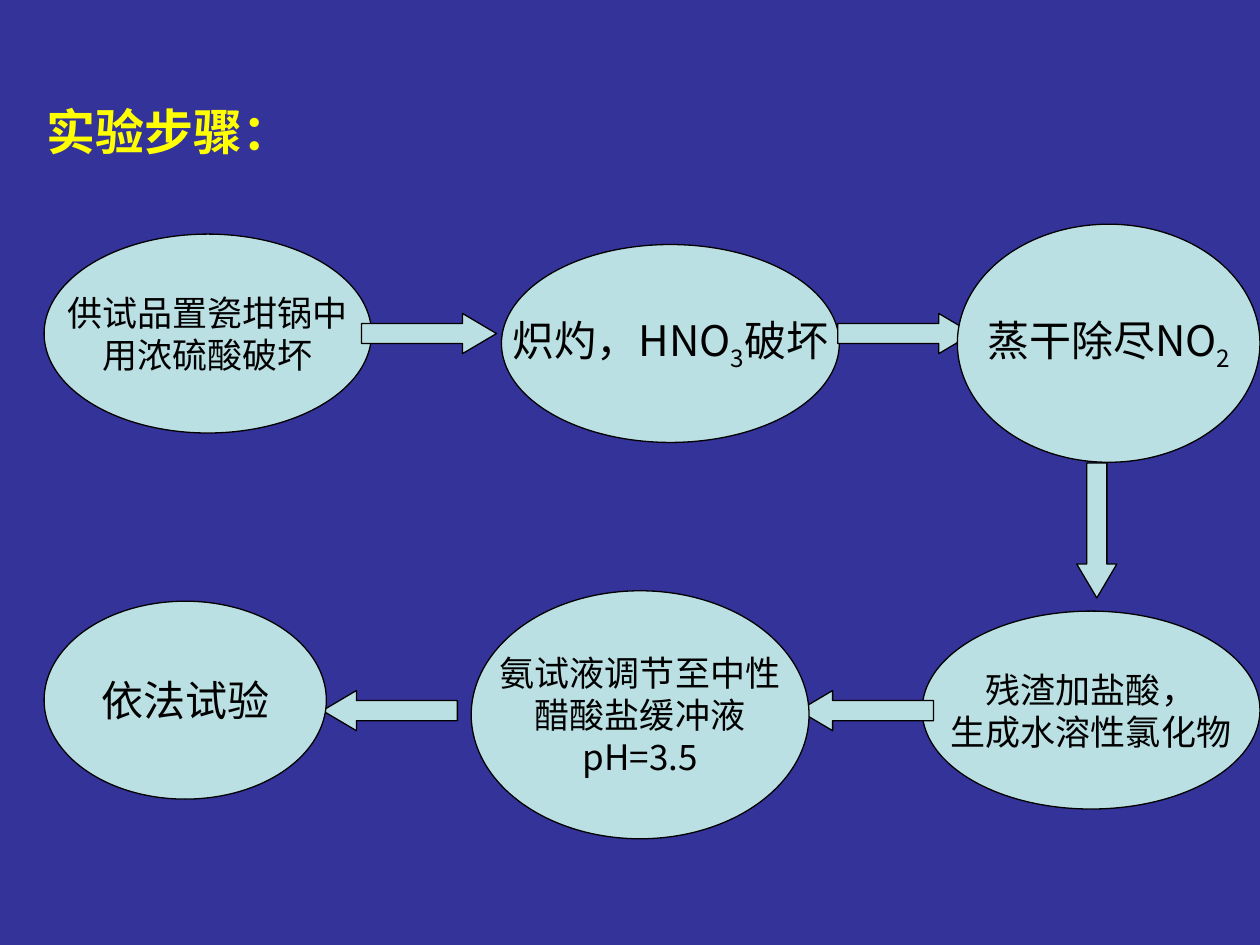
from pptx import Presentation
from pptx.dml.color import RGBColor
from pptx.enum.shapes import MSO_SHAPE
from pptx.enum.text import MSO_ANCHOR, MSO_AUTO_SIZE, PP_ALIGN
from pptx.oxml.ns import qn
from pptx.util import Cm, Pt

NAVY = RGBColor(0x33, 0x33, 0x99)
PALE_TEAL = RGBColor(0xBB, 0xE0, 0xE3)
YELLOW = RGBColor(0xFF, 0xFF, 0x00)
BLACK = RGBColor(0x00, 0x00, 0x00)
CJK_FONT = "Noto Sans CJK SC"

ARROW_WIDTH, ARROW_HEIGHT = 2.72, 0.81


def write_text(shape, text, size, font=CJK_FONT, color=BLACK, bold=False,
               align=PP_ALIGN.CENTER, anchor=MSO_ANCHOR.MIDDLE, wrap=False):
    """Fill a shape: a newline starts a paragraph, _underscores_ enclose a subscript."""
    frame = shape.text_frame
    frame.word_wrap = wrap
    frame.vertical_anchor = anchor
    for index, line in enumerate(text.split("\n")):
        paragraph = frame.add_paragraph() if index else frame.paragraphs[0]
        paragraph.alignment = align
        for position, part in enumerate(line.split("_")):
            if not part:
                continue
            run = paragraph.add_run()
            run.text = part
            run.font.name = font
            run.font.size = Pt(size)
            run.font.bold = bold
            run.font.color.rgb = color
            properties = run.font._element
            east_asian = properties.makeelement(qn("a:ea"), {"typeface": CJK_FONT})
            properties.find(qn("a:latin")).addnext(east_asian)
            if position % 2:
                properties.set("baseline", "-25000")


def add_flow_shape(slide, kind, left, top, width, height):
    shape = slide.shapes.add_shape(kind, Cm(left), Cm(top), Cm(width), Cm(height))
    shape.shadow.inherit = False
    shape.fill.solid()
    shape.fill.fore_color.rgb = PALE_TEAL
    shape.line.color.rgb = BLACK
    shape.line.width = Pt(0.75)
    return shape


presentation = Presentation()
presentation.slide_width = Cm(25.4)
presentation.slide_height = Cm(19.05)
slide = presentation.slides.add_slide(presentation.slide_layouts[6])
slide.background.fill.solid()
slide.background.fill.fore_color.rgb = NAVY

# Each step: text, size, font, ellipse box, then left, top, rotation of the arrow after it
steps = [
    ("供试品置瓷坩锅中\n用浓硫酸破坏", 20, "Arial",
     (0.89, 4.72, 6.6, 4.01), (7.29, 6.32, 0)),
    ("炽灼，HNO_3_破坏", 24, CJK_FONT,
     (10.11, 4.93, 6.81, 3.99), (16.89, 6.32, 0)),
    ("蒸干除尽NO_2_", 24, CJK_FONT,
     (19.3, 4.52, 6.1, 4.8), (20.75, 10.29, 90)),
    ("残渣加盐酸，\n生成水溶性氯化物", 20, "Arial",
     (18.59, 12.32, 6.81, 3.99), (16.1, 13.92, 180)),
    ("氨试液调节至中性\n醋酸盐缓冲液\npH=3.5", 20, CJK_FONT,
     (9.5, 11.91, 6.81, 5), (6.5, 13.92, 180)),
    ("依法试验", 24, "Arial", (0.89, 12.12, 5.69, 3.99), None),
]
for text, size, font, box, arrow_place in steps:
    ellipse = add_flow_shape(slide, MSO_SHAPE.OVAL, *box)
    write_text(ellipse, text, size, font=font)
    if arrow_place:
        left, top, rotation = arrow_place
        arrow = add_flow_shape(slide, MSO_SHAPE.RIGHT_ARROW, left, top,
                               ARROW_WIDTH, ARROW_HEIGHT)
        arrow.adjustments[0] = 0.5
        arrow.adjustments[1] = 0.845
        arrow.rotation = rotation

heading = slide.shapes.add_textbox(Cm(0.69), Cm(1.93), Cm(8.2), Cm(1.45))
write_text(heading, "实验步骤：", 28, color=YELLOW, bold=True,
           align=PP_ALIGN.LEFT, anchor=MSO_ANCHOR.TOP, wrap=True)
heading.text_frame.auto_size = MSO_AUTO_SIZE.SHAPE_TO_FIT_TEXT

presentation.save("out.pptx")
